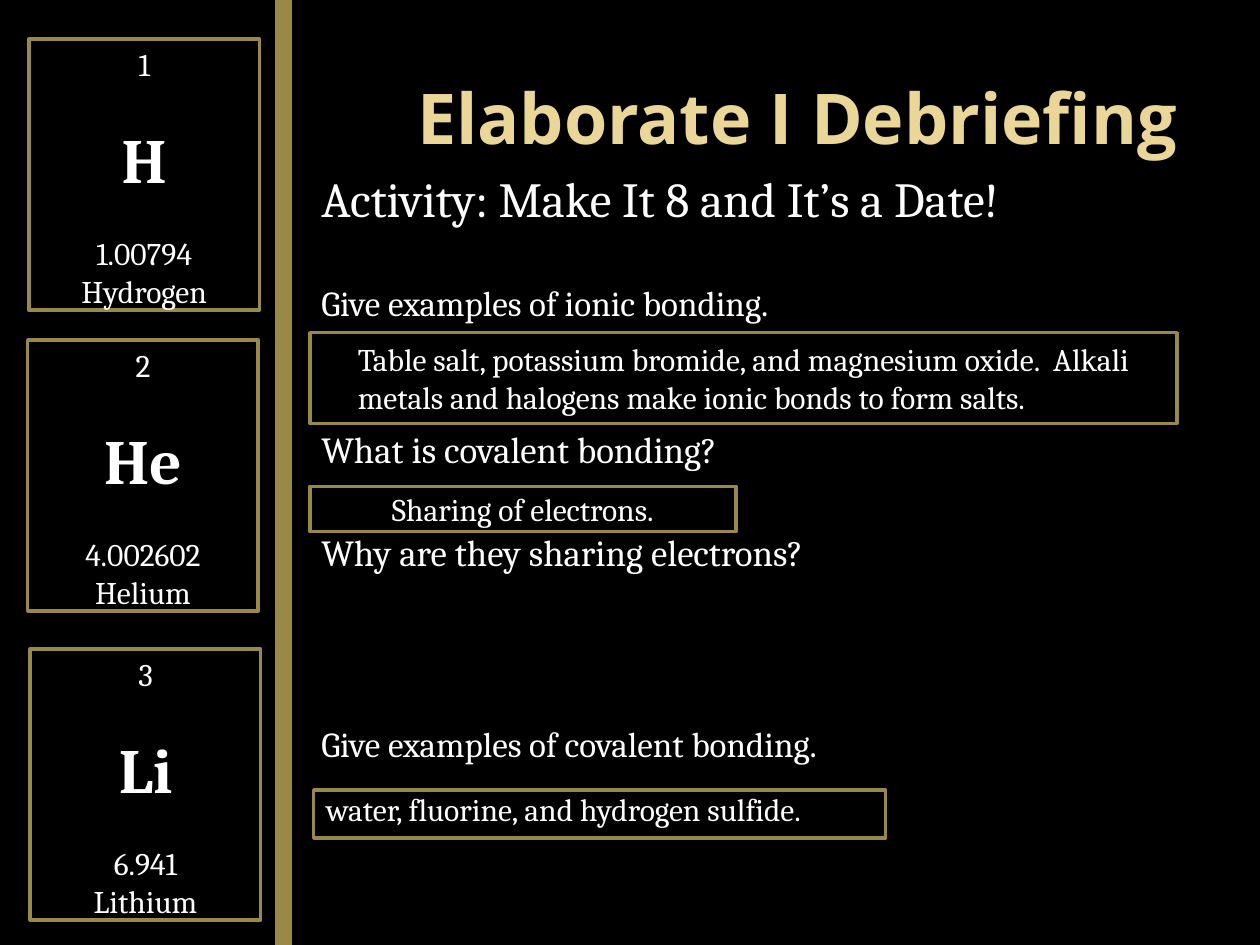
from dataclasses import dataclass

from lxml.etree import SubElement
from pptx import Presentation
from pptx.dml.color import RGBColor
from pptx.enum.shapes import MSO_CONNECTOR, MSO_SHAPE
from pptx.enum.text import MSO_ANCHOR, PP_ALIGN
from pptx.oxml.ns import qn
from pptx.util import Inches, Pt


@dataclass(frozen=True)
class Theme:
    background: RGBColor = RGBColor(0, 0, 0)
    text: RGBColor = RGBColor(255, 255, 255)
    title: RGBColor = RGBColor.from_string("EAD696")
    border: RGBColor = RGBColor.from_string("98894B")
    divider: RGBColor = RGBColor.from_string("998946")
    title_font: str = "Open Sans"
    body_font: str = "Cambria"
    title_size: int = 40
    heading_size: int = 28
    symbol_size: int = 36
    question_size: int = 20
    large_question_size: int = 21
    small_size: int = 18


THEME = Theme()


def write_paragraph(frame, text, size=THEME.small_size, font=THEME.body_font,
                    color=THEME.text, bold=False, align=PP_ALIGN.LEFT, before=0):
    paragraph = frame.paragraphs[0]
    if paragraph.runs:
        paragraph = frame.add_paragraph()
    paragraph.alignment = align
    paragraph.space_before = Pt(before)
    run = paragraph.add_run()
    run.text = text
    run.font.size = Pt(size)
    run.font.name = font
    run.font.bold = bold
    run.font.color.rgb = color


def prepare_frame(shape, anchor=MSO_ANCHOR.TOP, left=0.1, vertical=0.05):
    frame = shape.text_frame
    frame.word_wrap = True
    frame.vertical_anchor = anchor
    frame.margin_left, frame.margin_right = Inches(left), Inches(0.1)
    frame.margin_top = frame.margin_bottom = Inches(vertical)
    return frame


def add_text_area(slide, box, **frame_format):
    shape = slide.shapes.add_textbox(*map(Inches, box))
    return prepare_frame(shape, **frame_format)


def add_bordered_box(slide, box, **frame_format):
    shape = slide.shapes.add_shape(MSO_SHAPE.RECTANGLE, *map(Inches, box))
    shape.shadow.inherit = False
    shape.fill.solid()
    shape.fill.fore_color.rgb = THEME.background
    shape.line.color.rgb = THEME.border
    shape.line.width = Pt(2)
    return prepare_frame(shape, **frame_format)


def add_title(slide, box, text):
    frame = add_text_area(slide, box, anchor=MSO_ANCHOR.MIDDLE, left=0.82)
    write_paragraph(frame, text, size=THEME.title_size, font=THEME.title_font,
                    color=THEME.title, bold=True)


def add_questions(slide, box, questions):
    frame = add_text_area(slide, box, left=0.25)
    for text, size, before in questions:
        write_paragraph(frame, text, size=size, before=before)


def add_element_card(slide, box, number, symbol, mass, name):
    frame = add_bordered_box(slide, box)
    gap = 21.5
    write_paragraph(frame, number, align=PP_ALIGN.CENTER)
    write_paragraph(frame, symbol, size=THEME.symbol_size, bold=True,
                    align=PP_ALIGN.CENTER, before=gap)
    write_paragraph(frame, mass, align=PP_ALIGN.CENTER, before=gap)
    write_paragraph(frame, name, align=PP_ALIGN.CENTER)


def add_answer(slide, box, text, align=PP_ALIGN.LEFT, **frame_format):
    frame = add_bordered_box(slide, box, vertical=0, **frame_format)
    write_paragraph(frame, text, align=align)


def add_divider(slide, box):
    left, top, width, height = box
    line = slide.shapes.add_connector(
        MSO_CONNECTOR.STRAIGHT, Inches(left), Inches(top),
        Inches(left + width), Inches(top + height))
    line.line.color.rgb = THEME.divider
    line.line.width = Pt(10)
    SubElement(line._element.spPr, qn("a:effectLst"))


def build_slide(presentation):
    slide = presentation.slides.add_slide(presentation.slide_layouts[6])
    slide.background.fill.solid()
    slide.background.fill.fore_color.rgb = THEME.background

    add_title(slide, (2.49, 0.3, 7.51, 1.25), "Elaborate I Debriefing")
    add_questions(slide, (2.3, 1.29, 7.49, 5.15), [
        ("Activity: Make It 8 and It’s a Date!", THEME.heading_size, 0),
        ("Give examples of ionic bonding.", THEME.question_size, 31),
        ("What is covalent bonding?", THEME.large_question_size, 59),
        ("Why are they sharing electrons?", THEME.large_question_size, 33.5),
        ("Give examples of covalent bonding.", THEME.question_size, 85),
    ])

    elements = [
        (0.23, 0.31, "1", "H", "1.00794", "Hydrogen"),
        (0.22, 2.7, "2", "He", "4.002602", "Helium"),
        (0.24, 5.15, "3", "Li", "6.941", "Lithium"),
    ]
    for left, top, *facts in elements:
        add_element_card(slide, (left, top, 1.83, 2.15), *facts)
    add_divider(slide, (2.25, 0, 0, 7.5))

    add_answer(slide, (2.46, 2.64, 6.88, 0.72),
               "Table salt, potassium bromide, and magnesium oxide.  "
               "Alkali metals and halogens make ionic bonds to form salts.",
               anchor=MSO_ANCHOR.MIDDLE, left=0.38)
    add_answer(slide, (2.46, 3.86, 3.38, 0.36), "Sharing of electrons.",
               align=PP_ALIGN.CENTER, anchor=MSO_ANCHOR.MIDDLE)
    add_answer(slide, (2.49, 6.27, 4.54, 0.38),
               "water, fluorine, and hydrogen sulfide.")


def main():
    presentation = Presentation()
    presentation.slide_width = Inches(10)
    presentation.slide_height = Inches(7.5)
    build_slide(presentation)
    presentation.save("out.pptx")


if __name__ == "__main__":
    main()
